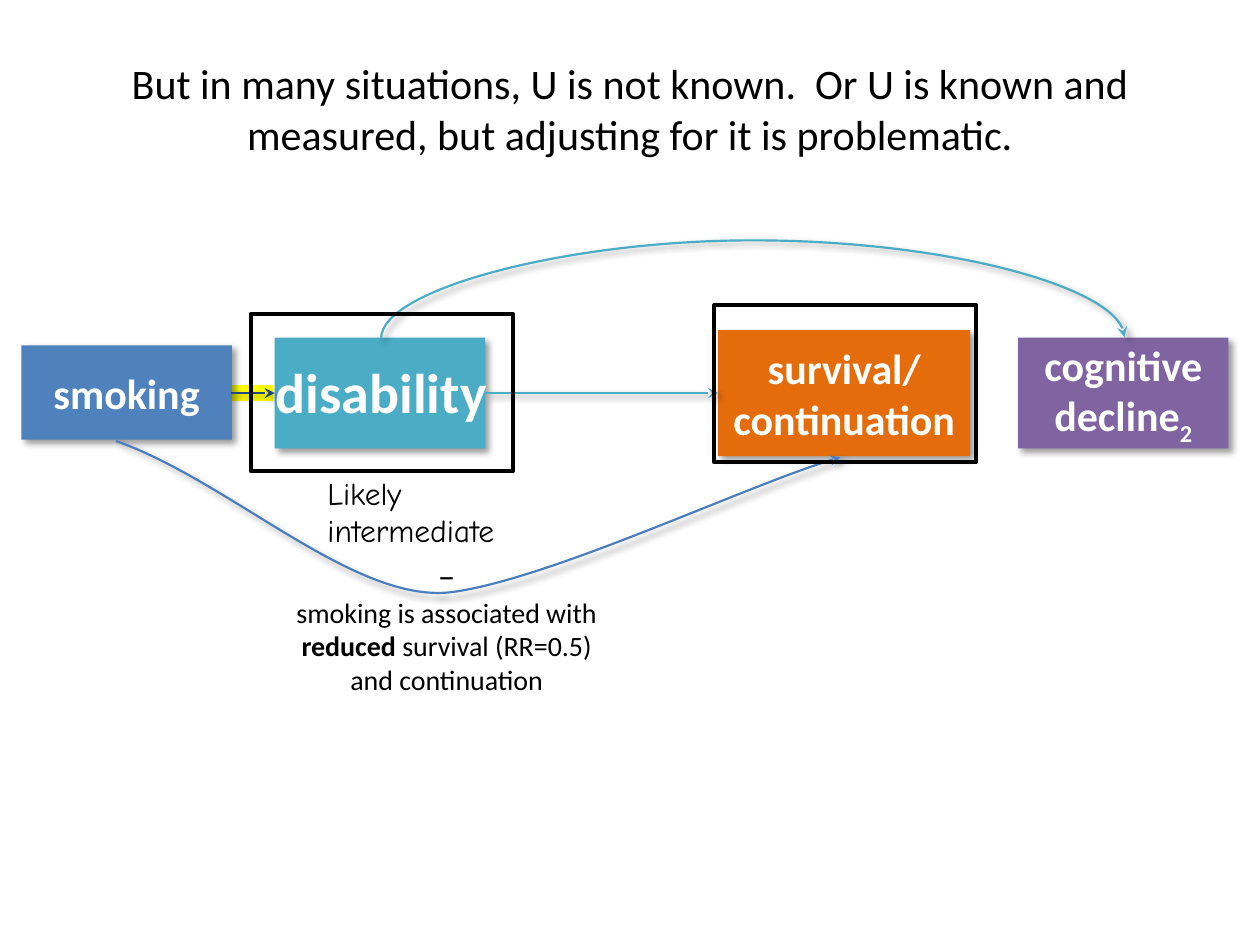
from lxml.etree import SubElement
from pptx import Presentation
from pptx.dml.color import RGBColor
from pptx.enum.shapes import MSO_CONNECTOR, MSO_SHAPE
from pptx.enum.text import MSO_ANCHOR, MSO_AUTO_SIZE, PP_ALIGN
from pptx.oxml.ns import qn
from pptx.util import Inches, Pt

BLACK = RGBColor(0x00, 0x00, 0x00)
WHITE = RGBColor(0xFF, 0xFF, 0xFF)
YELLOW = RGBColor(0xFF, 0xFF, 0x00)
BLUE = RGBColor(0x4F, 0x81, 0xBD)
CURVE_BLUE = RGBColor(0x4B, 0x7E, 0xBC)
NAVY = RGBColor(0x1F, 0x49, 0x7D)
TEAL = RGBColor(0x4B, 0xAC, 0xC6)
PURPLE = RGBColor(0x80, 0x64, 0xA2)
ORANGE = RGBColor(0xE4, 0x6C, 0x0A)


def set_effects(shape, shadow=True):
    properties = shape._element.spPr
    effects = properties.find(qn("a:effectLst"))
    if effects is None:
        effects = SubElement(properties, qn("a:effectLst"))
    if shadow:
        outer = SubElement(effects, qn("a:outerShdw"), blurRad=str(Pt(4)), dist=str(Pt(3)),
                           dir="2700000", algn="tl", rotWithShape="0")
        color = SubElement(outer, qn("a:srgbClr"), val="000000")
        SubElement(color, qn("a:alpha"), val="40000")


def style_line(shape, color, width=1.25, arrow=True):
    shape.line.color.rgb = color
    shape.line.width = Pt(width)
    if arrow:
        SubElement(shape._element.spPr.find(qn("a:ln")), qn("a:tailEnd"), type="stealth")
    set_effects(shape, shadow=arrow)


deck = Presentation()
deck.slide_width, deck.slide_height = Inches(10), Inches(7.5)
page = deck.slides.add_slide(deck.slide_layouts[5])
shapes = page.shapes

title = shapes.title
title.left, title.top, title.width, title.height = Inches(0.5), Inches(0.3), Inches(9), Inches(1.12)
title.text_frame.text = ("But in many situations, U is not known.  Or U is known and measured, "
                         "but adjusting for it is problematic.")
title.text_frame.vertical_anchor = MSO_ANCHOR.MIDDLE
para = title.text_frame.paragraphs[0]
para.alignment = PP_ALIGN.CENTER
para.font.size, para.font.name, para.font.color.rgb = Pt(24), "Calibri", BLACK

axis = Inches(3.12)
highlight = shapes.add_connector(MSO_CONNECTOR.STRAIGHT, Inches(1.83), axis, Inches(2.17), axis)
style_line(highlight, YELLOW, 9.25, arrow=False)

for left, top, width, height, color, label, subscript in [
    (0.17, 2.74, 1.67, 0.75, BLUE, "smoking", ""),
    (2.18, 2.68, 1.67, 0.88, TEAL, "", ""),
    (8.08, 2.68, 1.67, 0.88, PURPLE, "cognitive decline", "2"),
    (5.7, 2.62, 2, 1, ORANGE, "survival/ continuation", ""),
]:
    node = shapes.add_shape(MSO_SHAPE.RECTANGLE, Inches(left), Inches(top), Inches(width), Inches(height))
    node.fill.solid()
    node.fill.fore_color.rgb = color
    node.line.fill.background()
    node.shadow.inherit = False
    set_effects(node)
    if label:
        node.text_frame.vertical_anchor = MSO_ANCHOR.MIDDLE
        para = node.text_frame.paragraphs[0]
        para.alignment = PP_ALIGN.CENTER
        para.font.size, para.font.name, para.font.bold = Pt(24), "Calibri", True
        para.font.color.rgb = WHITE
        para.add_run().text = label
        if subscript:
            span = para.add_run()
            span.text = subscript
            span.font._element.set("baseline", "-25000")

note = shapes.add_textbox(Inches(2.17), Inches(4.34), Inches(2.75), Inches(1.25))
note.text_frame.word_wrap = True
note.text_frame.auto_size = MSO_AUTO_SIZE.SHAPE_TO_FIT_TEXT
dash = note.text_frame.paragraphs[0]
dash.text = "–"
detail = note.text_frame.add_paragraph()
for text, bold in [("smoking is associated with ", False), ("reduced", True),
                   (" survival (RR=0.5) and continuation", False)]:
    span = detail.add_run()
    span.text, span.font.bold = text, bold
for para, size in [(dash, 20), (detail, 16)]:
    para.alignment = PP_ALIGN.CENTER
    para.font.size, para.font.name, para.font.color.rgb = Pt(size), "Calibri", BLACK

to_survival = shapes.add_connector(MSO_CONNECTOR.STRAIGHT, Inches(3.85), axis, Inches(5.7), axis)
style_line(to_survival, TEAL)

curve_points = [(1.83, 3.82), (2.81, 4.79), (3.58, 4.7), (4.36, 4.6), (6.04, 3.8), (6.67, 3.63)]
builder = shapes.build_freeform(Inches(0.92), Inches(3.5))
builder.add_line_segments([(Inches(x), Inches(y)) for x, y in curve_points], close=False)
smoking_curve = builder.convert_to_shape()
outline = smoking_curve._element.spPr.find(".//" + qn("a:path"))
segments = outline.findall(qn("a:lnTo"))
for first in range(0, len(segments), 3):
    bezier = SubElement(outline, qn("a:cubicBezTo"))
    for segment in segments[first:first + 3]:
        bezier.append(segment[0])
        outline.remove(segment)
smoking_curve.fill.background()
smoking_curve.shadow.inherit = False
style_line(smoking_curve, CURVE_BLUE)

arc = shapes.add_connector(MSO_CONNECTOR.CURVE, Inches(5.98), Inches(5.63), Inches(5.97), Inches(-0.27))
arc._element.spPr.find(qn("a:xfrm")).set("rot", "5400000")
geometry = arc._element.spPr.find(qn("a:prstGeom"))
guides = geometry.find(qn("a:avLst"))
if guides is None:
    guides = SubElement(geometry, qn("a:avLst"))
SubElement(guides, qn("a:gd"), name="adj1", fmla="val 7900000")
style_line(arc, TEAL)


for part in ("disability", "survival frame", "to disability", "intermediate", "disability frame"):
    if part.endswith("frame"):
        left, top = (5.67, 2.42) if part.startswith("survival") else (1.99, 2.49)
        frame = shapes.add_shape(MSO_SHAPE.RECTANGLE, Inches(left), Inches(top), Inches(2.08), Inches(1.25))
        frame.fill.background()
        frame.shadow.inherit = False
        style_line(frame, BLACK, 2.25, arrow=False)
    elif part == "to disability":
        arrow = shapes.add_connector(MSO_CONNECTOR.STRAIGHT, Inches(1.83), axis, Inches(2.18), axis)
        style_line(arrow, NAVY)
    else:
        left, top, width, height, text, size, font, color, bold, wrap = {
            "disability": (2.09, 2.79, 1.89, 0.64, "disability", 32, "Calibri", WHITE, True, False),
            "intermediate": (2.5, 3.71, 1.83, 0.4, "Likely intermediate", 18, "Comic Neue", BLACK, False, True),
        }[part]
        box = shapes.add_textbox(Inches(left), Inches(top), Inches(width), Inches(height))
        box.text_frame.word_wrap = wrap
        box.text_frame.auto_size = MSO_AUTO_SIZE.SHAPE_TO_FIT_TEXT
        para = box.text_frame.paragraphs[0]
        para.text = text
        para.font.size, para.font.name, para.font.bold = Pt(size), font, bold
        para.font.color.rgb = color

deck.save("out.pptx")
